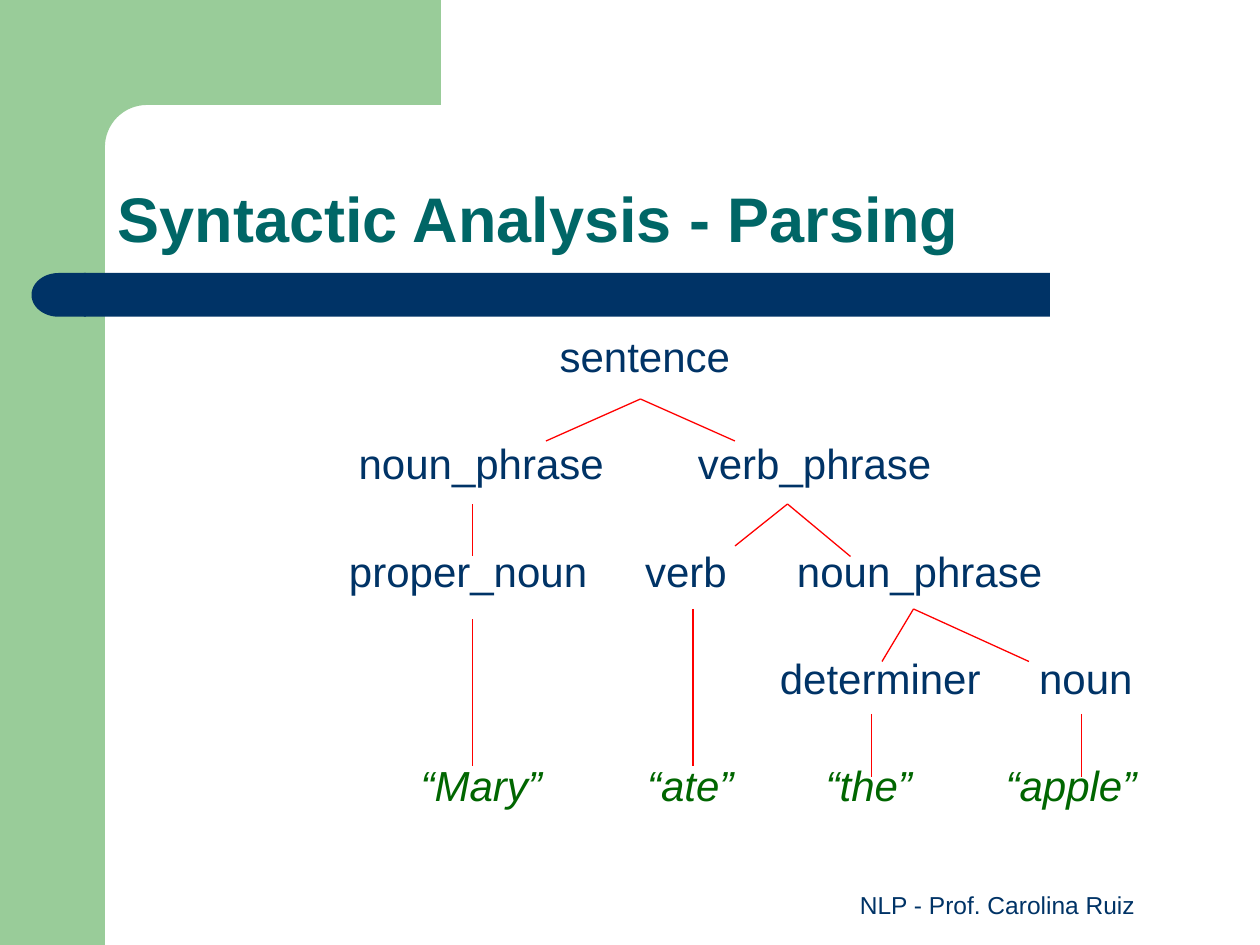
import math

import pptx
import pptx.dml.color
import pptx.enum.shapes
import pptx.enum.text
import pptx.oxml
import pptx.oxml.ns
import pptx.util

Pt = pptx.util.Pt
RGBColor = pptx.dml.color.RGBColor
SHAPE = pptx.enum.shapes.MSO_SHAPE
ALIGN = pptx.enum.text.PP_ALIGN
ANCHOR = pptx.enum.text.MSO_ANCHOR

GREEN = RGBColor(0x99, 0xCC, 0x99)
NAVY = RGBColor(0x00, 0x33, 0x66)
TEAL = RGBColor(0x00, 0x66, 0x66)
DARK_GREEN = RGBColor(0x00, 0x66, 0x00)
RED = RGBColor(0xFF, 0x00, 0x00)

FIRST_ROW_TOP = 189
ROW_PITCH = 61.3
NODE_WIDTH = 160
NODE_HEIGHT = 28

TREE_ROWS = [
    [("sentence", 368.5)],
    [("noun_phrase", 275), ("verb_phrase", 465.5)],
    [("proper_noun", 267.5), ("verb", 392), ("noun_phrase", 525.5)],
    [("determiner", 503), ("noun", 620.5)],
    [("“Mary”", 275), ("“ate”", 394.5), ("“the”", 496.5), ("“apple”", 612)],
]

BRANCHES = [
    ((366, 228), [(312, 252), (420, 252)]),
    ((270, 288), [(270, 318)]),
    ((270, 354), [(270, 438)]),
    ((450, 288), [(420, 312), (486, 318)]),
    ((522, 348), [(504, 378), (588, 378)]),
    ((396, 348), [(396, 438)]),
    ((498, 408), [(498, 444)]),
    ((618, 408), [(618, 444)]),
]


def write_text(frame, text, size=24, color=NAVY, bold=False, italic=False,
               align=ALIGN.CENTER, anchor=ANCHOR.TOP, spacing=1.0, inset=(7.2, 3.6)):
    frame.word_wrap = True
    frame.auto_size = pptx.enum.text.MSO_AUTO_SIZE.NONE
    frame.vertical_anchor = anchor
    frame.margin_left = frame.margin_right = Pt(inset[0])
    frame.margin_top = frame.margin_bottom = Pt(inset[1])
    paragraph = frame.paragraphs[0]
    paragraph.alignment = align
    paragraph.line_spacing = spacing
    run = paragraph.add_run()
    run.text = text
    run.font.name = "Arial"
    run.font.size = Pt(size)
    run.font.bold = bold
    run.font.italic = italic
    run.font.color.rgb = color


def add_label(slide, text, left, top, width, height, **text_format):
    label = slide.shapes.add_textbox(Pt(left), Pt(top), Pt(width), Pt(height))
    write_text(label.text_frame, text, **text_format)


def paint(shape, color):
    shape.shadow.inherit = False
    shape.fill.solid()
    shape.fill.fore_color.rgb = color
    shape.line.fill.background()


def add_block(slide, preset, left, top, width, height, color):
    block = slide.shapes.add_shape(preset, Pt(left), Pt(top), Pt(width), Pt(height))
    paint(block, color)
    return block


def add_corner(slide):
    radius, steps = 24, 16
    angles = [math.pi / 2 * step / steps for step in range(steps + 1)]
    curve = [(84 - radius * math.sin(a), 84 - radius * math.cos(a)) for a in angles]
    outline = [(252, 60), *curve, (60, 92), (36, 92), (36, 0)]
    builder = slide.shapes.build_freeform(Pt(252), 0, scale=1.0)
    builder.add_line_segments([(Pt(x), Pt(y)) for x, y in outline], close=True)
    paint(builder.convert_to_shape(), GREEN)


def add_branch(slide, parent, child):
    branch = slide.shapes.add_connector(
        pptx.enum.shapes.MSO_CONNECTOR.STRAIGHT, *map(Pt, parent + child))
    branch.line.color.rgb = RED
    branch.line.width = Pt(0.75)
    properties = branch._element.spPr
    properties.append(pptx.oxml.parse_xml(
        "<a:effectLst %s/>" % pptx.oxml.ns.nsdecls("a")))


def add_title(slide, text):
    title = slide.shapes.title
    title.left, title.top, title.width, title.height = map(Pt, (60, 60, 624, 90))
    write_text(title.text_frame, text, size=36, color=TEAL, bold=True,
               align=ALIGN.LEFT, anchor=ANCHOR.BOTTOM, spacing=0.9)


def add_decoration(slide):
    add_block(slide, SHAPE.RECTANGLE, 0, 0, 60, 540, GREEN)
    add_corner(slide)
    bar = add_block(slide, SHAPE.ROUNDED_RECTANGLE, 48, 156, 552, 25, NAVY)
    bar.adjustments[0] = 0
    bar_end = add_block(slide, SHAPE.FLOWCHART_DELAY, 18, 156, 31, 25, NAVY)
    bar_end.rotation = 180


def add_parse_tree(slide):
    for level, row in enumerate(TREE_ROWS):
        is_word = level == len(TREE_ROWS) - 1
        for text, center in row:
            add_label(slide, text, center - NODE_WIDTH / 2,
                      FIRST_ROW_TOP + level * ROW_PITCH, NODE_WIDTH, NODE_HEIGHT,
                      color=DARK_GREEN if is_word else NAVY, italic=is_word,
                      inset=(0, 0))
    for parent, children in BRANCHES:
        for child in children:
            add_branch(slide, parent, child)


def main():
    deck = pptx.Presentation()
    deck.slide_width, deck.slide_height = Pt(720), Pt(540)
    slide = deck.slides.add_slide(deck.slide_layouts[5])
    add_decoration(slide)
    add_label(slide, "NLP - Prof. Carolina Ruiz", 456, 492, 228, 37,
              size=14, anchor=ANCHOR.BOTTOM)
    add_title(slide, "Syntactic Analysis - Parsing")
    add_parse_tree(slide)
    deck.save("out.pptx")


if __name__ == "__main__":
    main()
